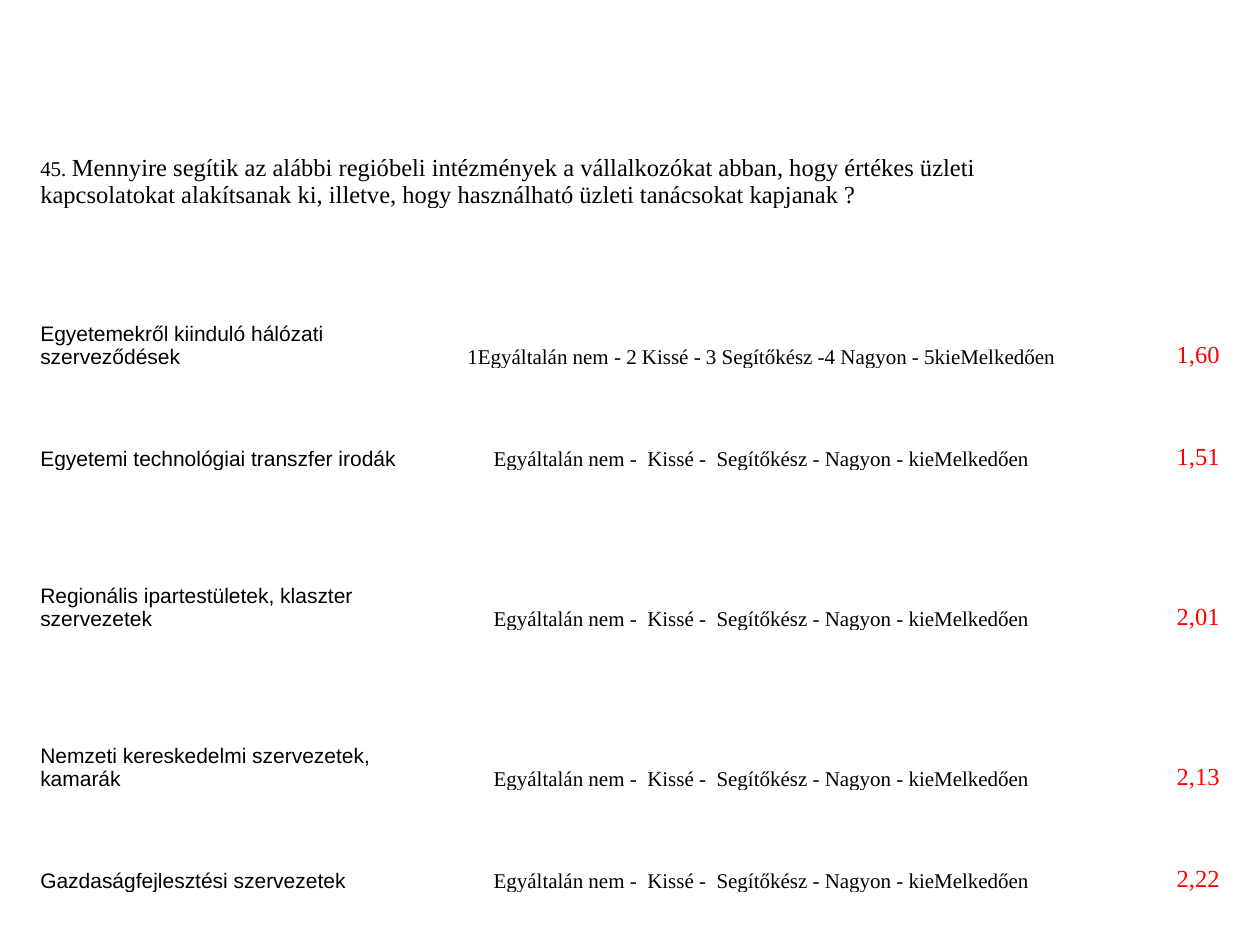
import pptx
import pptx.util
import pptx.dml.color
import pptx.enum.text

Inches = pptx.util.Inches
ALIGN = pptx.enum.text.PP_ALIGN

THEME = {
    "black": pptx.dml.color.RGBColor(0x00, 0x00, 0x00),
    "red": pptx.dml.color.RGBColor(0xFF, 0x00, 0x00),
    "small": pptx.util.Pt(12),
    "large": pptx.util.Pt(14),
    "serif": "Times New Roman",
    "sans": "Arial",
}
NUMBER = {"name": THEME["serif"], "size": THEME["small"], "color": THEME["black"]}
QUESTION = {**NUMBER, "size": THEME["large"]}
LABEL = {**NUMBER, "name": THEME["sans"]}
SCORE = {**QUESTION, "color": THEME["red"]}
CELL = {
    "margin_left": Inches(0.01),
    "margin_right": Inches(0.01),
    "margin_top": Inches(0.01),
    "margin_bottom": 0,
    "vertical_anchor": pptx.enum.text.MSO_ANCHOR.BOTTOM,
}

COLS = [3.25, 4.97, 0.58, 0.58]
ROWS = [1.35, 1.27, 0.81, 1.27, 1.27, 0.81]
SCALE = "Egyáltalán nem -  Kissé -  Segítőkész - Nagyon - kieMelkedően"
ANSWERS = [
    ("Egyetemekről kiinduló hálózati szerveződések",
     "1Egyáltalán nem - 2 Kissé - 3 Segítőkész -4 Nagyon - 5kieMelkedően", "1,60"),
    ("Egyetemi technológiai transzfer irodák", SCALE, "1,51"),
    ("Regionális ipartestületek, klaszter szervezetek", SCALE, "2,01"),
    ("Nemzeti kereskedelmi szervezetek, kamarák", SCALE, "2,13"),
    ("Gazdaságfejlesztési szervezetek", SCALE, "2,22"),
]


def add_run(p, text, fmt):
    r = p.add_run()
    r.text = text
    r.font.name = fmt["name"]
    r.font.size = fmt["size"]
    r.font.color.rgb = fmt["color"]


prs = pptx.Presentation()
prs.slide_width = Inches(10)
prs.slide_height = Inches(7.5)
s = prs.slides.add_slide(prs.slide_layouts[6])

table = s.shapes.add_table(
    len(ROWS), len(COLS), Inches(0.31), Inches(0.31), Inches(sum(COLS)), Inches(sum(ROWS))
).table
table.first_row = False
table.horz_banding = False
for col, width in zip(table.columns, COLS):
    col.width = Inches(width)
for row, height in zip(table.rows, ROWS):
    row.height = Inches(height)
for cell in table.iter_cells():
    cell.fill.background()
    for name, value in CELL.items():
        setattr(cell, name, value)

table.cell(0, 0).merge(table.cell(0, 1))
p = table.cell(0, 0).text_frame.paragraphs[0]
add_run(p, "45. ", NUMBER)
add_run(p, "Mennyire segítik az alábbi regióbeli intézmények a vállalkozókat abban, "
           "hogy értékes üzleti kapcsolatokat alakítsanak ki, illetve, hogy használható "
           "üzleti tanácsokat kapjanak ?", QUESTION)

for i, (label, scale, score) in enumerate(ANSWERS, start=1):
    for j, text, fmt, align in [
        (0, label, LABEL, ALIGN.LEFT),
        (1, scale, NUMBER, ALIGN.CENTER),
        (3, score, SCORE, ALIGN.RIGHT),
    ]:
        p = table.cell(i, j).text_frame.paragraphs[0]
        p.alignment = align
        add_run(p, text, fmt)

prs.save("out.pptx")
